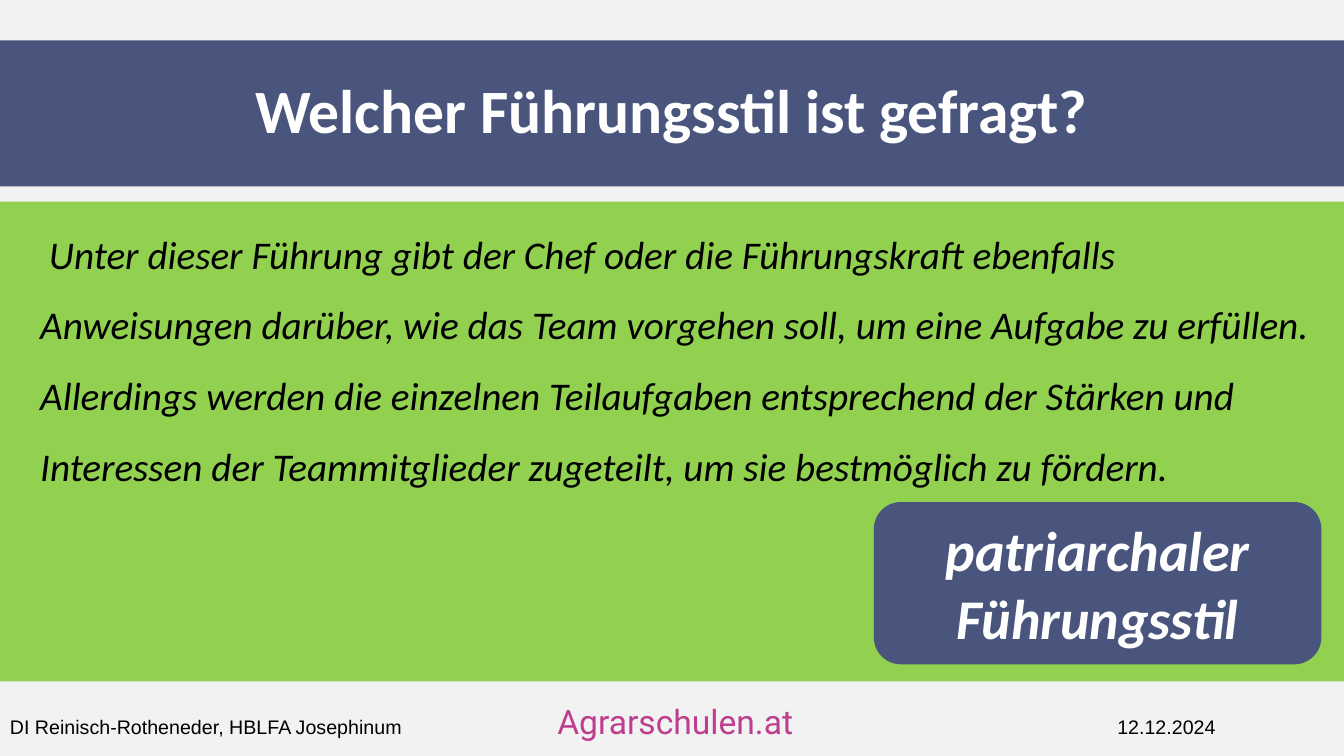
from lxml.etree import SubElement
from pptx import Presentation
from pptx.dml.color import RGBColor
from pptx.enum.shapes import MSO_SHAPE
from pptx.enum.text import MSO_ANCHOR, MSO_AUTO_SIZE, PP_ALIGN
from pptx.oxml.ns import qn
from pptx.util import Pt

WIDTH, HEIGHT = 960, 540
GREY = RGBColor(0xF2, 0xF2, 0xF2)
BLUE = RGBColor(0x49, 0x55, 0x7C)
GREEN = RGBColor(0x92, 0xD0, 0x50)
PINK = RGBColor(0xBD, 0x3E, 0x8E)
WHITE = RGBColor(0xFF, 0xFF, 0xFF)
BLACK = RGBColor(0, 0, 0)


def fill_solid(sp, color):
    sp.fill.solid()
    sp.fill.fore_color.rgb = color


def add_panel(s, kind, box, color):
    sp = s.shapes.add_shape(kind, *map(Pt, box))
    sp.shadow.inherit = False
    fill_solid(sp, color)
    sp.line.fill.background()
    return sp


def prepare_text(sp, anchor, align, spacing=1.0):
    """Set up the text frame and return its first paragraph."""
    tf = sp.text_frame
    tf.word_wrap = True
    tf.auto_size = MSO_AUTO_SIZE.NONE
    tf.vertical_anchor = anchor
    p = tf.paragraphs[0]
    p.alignment = align
    p.line_spacing = spacing
    return p


def add_text(p, text, size, color, font="Calibri", bold=False, italic=False):
    r = p.add_run()
    r.text = text
    r.font.name = font
    r.font.size = Pt(size)
    r.font.bold = bold
    r.font.italic = italic
    r.font.color.rgb = color


def indent(p, left, first):
    pPr = p._p.get_or_add_pPr()
    pPr.set("marL", str(Pt(left)))
    pPr.set("indent", str(Pt(first)))


def add_tabs(p, positions):
    tabs = SubElement(p._p.get_or_add_pPr(), qn("a:tabLst"))
    for position in positions:
        SubElement(tabs, qn("a:tab"), pos=str(Pt(position)), algn="l")


def add_title(s, text):
    sp = s.shapes.title
    sp.left, sp.top, sp.width, sp.height = Pt(0), Pt(28.8), Pt(WIDTH), Pt(104.4)
    fill_solid(sp, BLUE)
    p = prepare_text(sp, MSO_ANCHOR.MIDDLE, PP_ALIGN.CENTER, 0.9)
    add_text(p, text, 44, WHITE, bold=True)


def add_description(s, text):
    sp = add_panel(s, MSO_SHAPE.RECTANGLE, (0, 144, WIDTH, 342.7), GREEN)
    p = prepare_text(sp, MSO_ANCHOR.TOP, PP_ALIGN.LEFT, 1.5)
    indent(p, 21.6, 6.3)
    add_text(p, text, 28, BLACK, italic=True)


def add_answer(s, text):
    box = (624.2, 358.6, 319.7, 115.9)
    sp = add_panel(s, MSO_SHAPE.ROUNDED_RECTANGLE, box, BLUE)
    p = prepare_text(sp, MSO_ANCHOR.MIDDLE, PP_ALIGN.CENTER)
    add_text(p, text, 40, WHITE, bold=True, italic=True)


def add_footer(s, author, site, date):
    sp = s.shapes.add_textbox(Pt(0), Pt(496.8), Pt(WIDTH), Pt(36))
    p = prepare_text(sp, MSO_ANCHOR.TOP, PP_ALIGN.LEFT)
    add_tabs(p, (391, 791))
    add_text(p, author + "\t", 14, BLACK, font="Arial")
    add_text(p, site + "\t", 24, PINK, font="Roboto")
    add_text(p, date, 14, BLACK, font="Arial")


def main():
    prs = Presentation()
    prs.slide_width, prs.slide_height = Pt(WIDTH), Pt(HEIGHT)
    s = prs.slides.add_slide(prs.slide_layouts[5])
    fill_solid(s.background, GREY)
    add_title(s, "Welcher Führungsstil ist gefragt?")
    add_description(
        s,
        "Unter dieser Führung gibt der Chef oder die Führungskraft ebenfalls "
        "Anweisungen darüber, wie das Team vorgehen soll, um eine Aufgabe zu "
        "erfüllen. Allerdings werden die einzelnen Teilaufgaben entsprechend "
        "der Stärken und Interessen der Teammitglieder zugeteilt, um sie "
        "bestmöglich zu fördern.",
    )
    add_answer(s, "patriarchaler Führungsstil")
    add_footer(s, "DI Reinisch-Rotheneder, HBLFA Josephinum",
               "Agrarschulen.at", "12.12.2024")
    prs.save("out.pptx")


if __name__ == "__main__":
    main()
